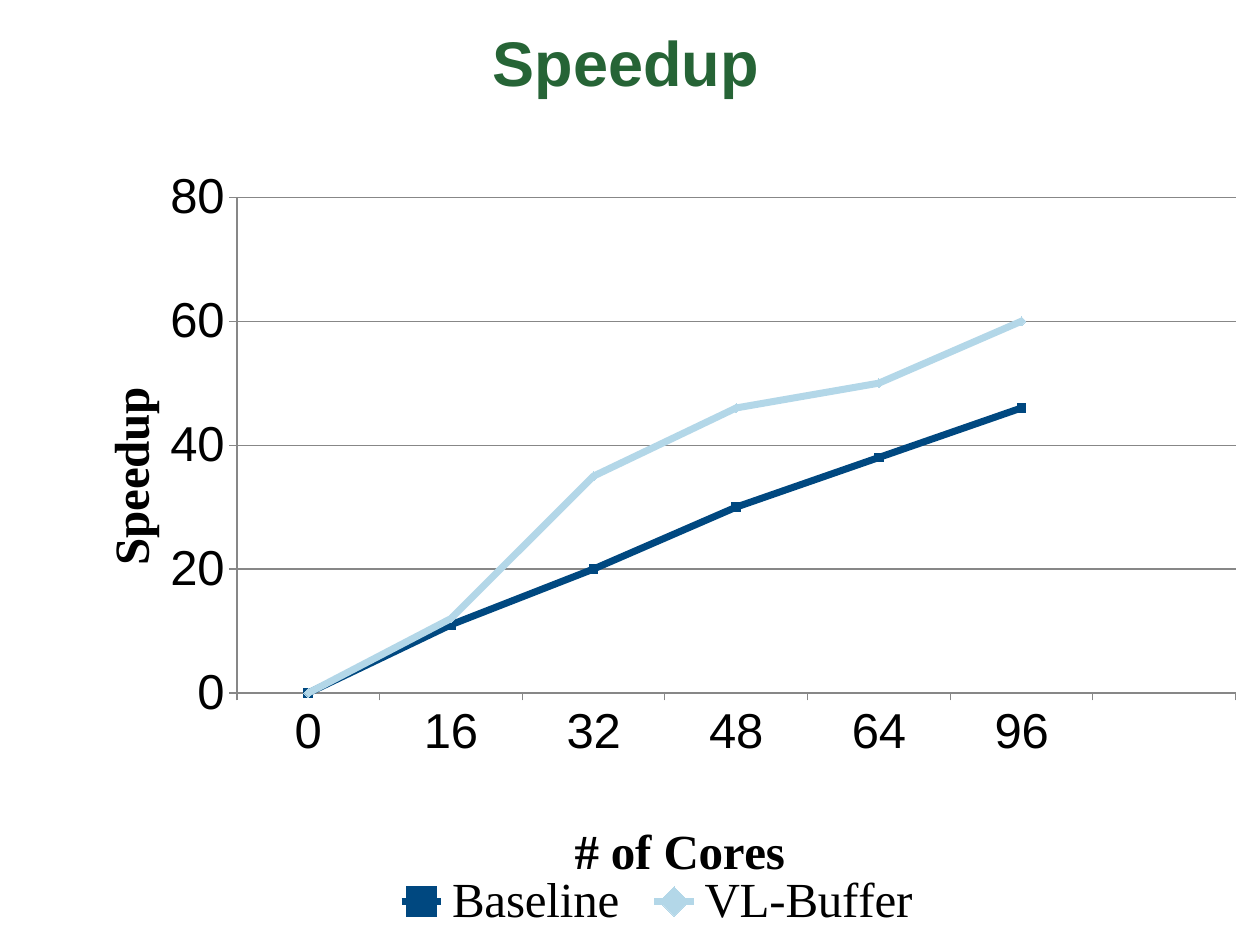
from lxml import etree
from pptx import Presentation, util as u
from pptx.chart.data import CategoryChartData
from pptx.dml.color import RGBColor
from pptx.enum import chart as ch, text
from pptx.oxml.ns import qn

# Content
TITLE = "Speedup"
CATEGORIES = ["0", "16", "32", "48", "64", "96", ""]
NAVY, SKY = RGBColor(0x00, 0x48, 0x80), RGBColor(0xB3, 0xD7, 0xE8)
GREEN, BLACK, GRAY = (RGBColor(0x26, 0x64, 0x36), RGBColor(0, 0, 0),
                      RGBColor(0x87, 0x87, 0x87))
SERIES = [
    ("Baseline", [0, 11, 20, 30, 38, 46, None], NAVY, ch.XL_MARKER_STYLE.SQUARE),
    ("VL-Buffer", [0, 12, 35, 46, 50, 60, None], SKY, ch.XL_MARKER_STYLE.DIAMOND),
]
SANS, SERIF = "Arial", "Times New Roman"
CHART_SIZE = 28
TITLE_BOX = (59, 10, 1134, 110)
CHART_BOX = (42, 158, 1218, 787)


def px(value):
    return u.Emu(value * 914400 // 126)


def set_font(font, name, size, color, bold=False):
    font.name, font.size, font.bold = name, u.Pt(size), bold
    font.color.rgb = color


def place(element, index, inner=False, **fractions):
    """Put a chart part at fractions of the chart area."""
    for old in element.findall(qn("c:layout")):
        element.remove(old)
    layout = etree.Element(qn("c:layout"))
    manual = etree.SubElement(layout, qn("c:manualLayout"))
    settings = {"layoutTarget": "inner"} if inner else {}
    settings.update(xMode="edge", yMode="edge", **fractions)
    for tag, value in settings.items():
        etree.SubElement(manual, qn("c:" + tag)).set("val", str(value))
    element.insert(index, layout)


def style_axis(axis, title, x, y):
    axis.major_tick_mark = ch.XL_TICK_MARK.OUTSIDE
    axis.minor_tick_mark = ch.XL_TICK_MARK.NONE
    set_font(axis.tick_labels.font, SANS, CHART_SIZE, BLACK)
    axis.format.line.color.rgb = GRAY
    axis.format.line.width = u.Pt(0.75)
    paragraph = axis.axis_title.text_frame.paragraphs[0]
    paragraph.text = title
    set_font(paragraph.runs[0].font, SERIF, CHART_SIZE, BLACK, True)
    place(axis.axis_title._element, 1, x=x, y=y)


presentation = Presentation()
presentation.slide_width, presentation.slide_height = px(1260), px(945)
slide = presentation.slides.add_slide(presentation.slide_layouts[6])

# Title
frame = slide.shapes.add_textbox(*map(px, TITLE_BOX)).text_frame
frame.word_wrap = True
frame.vertical_anchor = text.MSO_ANCHOR.MIDDLE
paragraph = frame.paragraphs[0]
paragraph.text = TITLE
paragraph.alignment = text.PP_ALIGN.CENTER
paragraph.line_spacing = 0.95
set_font(paragraph.font, SANS, 36, GREEN, True)

# Line chart
data = CategoryChartData()
data.categories = CATEGORIES
for name, values, *_ in SERIES:
    data.add_series(name, values)
chart = slide.shapes.add_chart(ch.XL_CHART_TYPE.LINE_MARKERS,
                               *map(px, CHART_BOX), data).chart
chart.has_title = False
set_font(chart.font, SANS, 10, BLACK)
plot = chart.plots[0]
plot.vary_by_categories = False
place(chart._chartSpace.chart.plotArea, 0, inner=True,
      x=0.16, y=0.05, w=0.82, h=0.63)

for series, (_, _, color, marker) in zip(plot.series, SERIES):
    series.smooth = False
    series.format.line.color.rgb = color
    series.format.line.width = u.Pt(4)
    series.marker.style, series.marker.size = marker, 5
    series.marker.format.fill.solid()
    series.marker.format.fill.fore_color.rgb = color
    series.marker.format.line.color.rgb = color

# Axes
style_axis(chart.category_axis, "# of Cores", 0.43, 0.83)
value_axis = chart.value_axis
style_axis(value_axis, "Speedup", 0.04, 0.28)
value_axis.minimum_scale, value_axis.maximum_scale = 0, 80
value_axis.major_unit = 20
value_axis.has_major_gridlines = True
value_axis.major_gridlines.format.line.color.rgb = GRAY
value_axis.major_gridlines.format.line.width = u.Pt(0.75)

# Legend
chart.has_legend = True
legend = chart.legend
legend.position = ch.XL_LEGEND_POSITION.BOTTOM
legend.include_in_layout = False
set_font(legend.font, SERIF, CHART_SIZE, BLACK)
place(legend._element, 1, x=0.28, y=0.92, w=0.45, h=0.08)

presentation.save("out.pptx")
